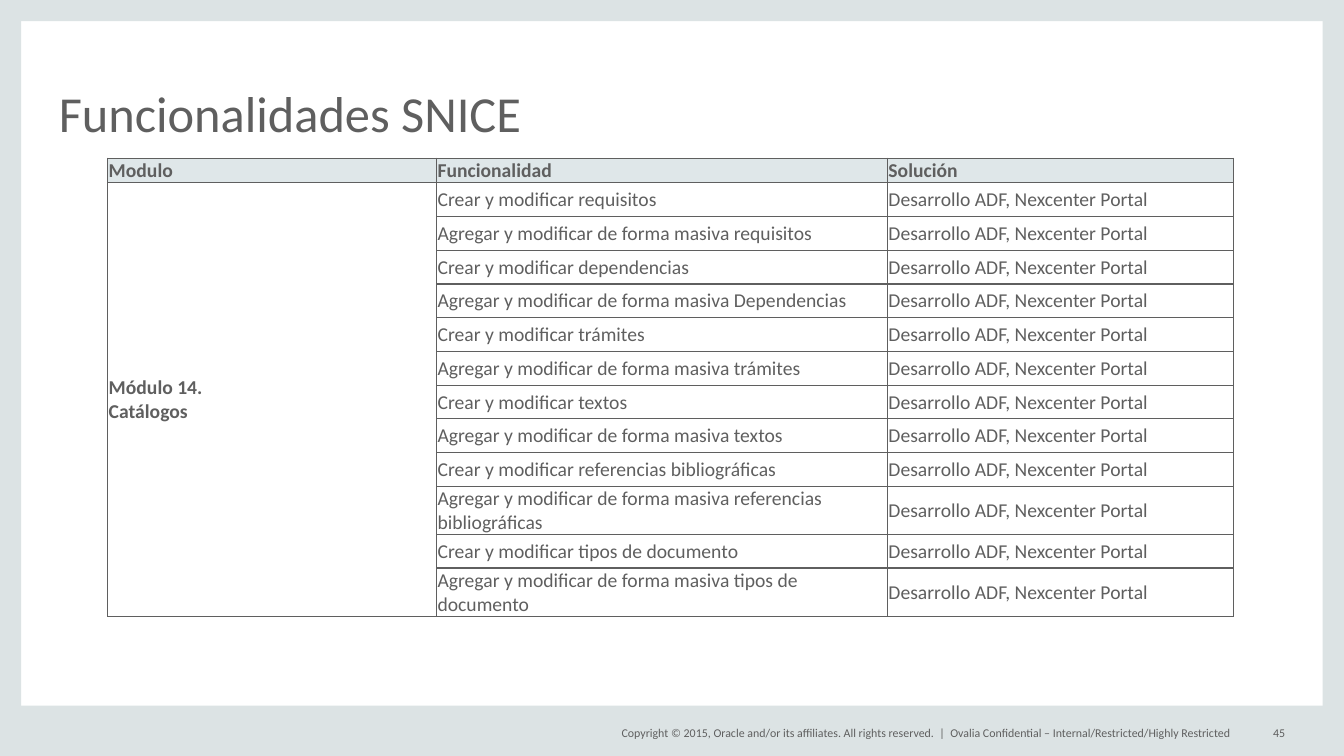
"""Build the SNICE functionality slide with its catalogue table."""
from typing import NamedTuple

from lxml import etree
from pptx import Presentation
from pptx.dml.color import RGBColor
from pptx.enum.shapes import MSO_SHAPE
from pptx.enum.text import MSO_ANCHOR, PP_ALIGN
from pptx.oxml.ns import qn
from pptx.util import Pt

RECT = MSO_SHAPE.RECTANGLE
MIDDLE, BOTTOM = MSO_ANCHOR.MIDDLE, MSO_ANCHOR.BOTTOM
LEFT, RIGHT = PP_ALIGN.LEFT, PP_ALIGN.RIGHT

GREY = RGBColor(0x5F, 0x5F, 0x5F)
FRAME = RGBColor(0xDC, 0xE3, 0xE4)
HEADER = RGBColor(0xDF, 0xE7, 0xE9)

WIDTH, HEIGHT = 960, 540
SIDE, FOOT = 15.2, 36
FOOTER_TOP, FOOTER_HEIGHT, FOOTER_SIZE = 516.2, 14.4, 8.5
TABLE_LEFT, TABLE_TOP = 77, 113
COLUMN_WIDTHS = (234.9, 322.1, 247.2)
HEADER_HEIGHT, ROW_HEIGHT = 16.6, 24.1
TABLE_SIZE = 14
BORDER = 1
CELL_FORMAT = {
    "margin_left": Pt(0.7),
    "margin_right": Pt(0.7),
    "margin_top": Pt(0.7),
    "margin_bottom": Pt(0),
    "vertical_anchor": MIDDLE,
}

HEADINGS = ("Modulo", "Funcionalidad", "Solución")
MODULE = "Módulo 14.\vCatálogos"
SOLUTION = "Desarrollo ADF, Nexcenter Portal"
SUBJECTS = (
    ("requisitos", "requisitos"),
    ("dependencias", "Dependencias"),
    ("trámites", "trámites"),
    ("textos", "textos"),
    ("referencias bibliográficas", "referencias bibliográficas"),
    ("tipos de documento", "tipos de documento"),
)


class Box(NamedTuple):
    """Position and size in points."""

    left: float
    top: float
    width: float
    height: float


class Label(NamedTuple):
    """A text box with its format."""

    text: str
    box: Box
    size: float
    align: PP_ALIGN = LEFT
    anchor: MSO_ANCHOR = MIDDLE
    wrap: bool = False
    line_spacing: float = 1


def footer(text: str, left: float, width: float, align: PP_ALIGN) -> Label:
    """Return a label on the footer line."""
    box = Box(left, FOOTER_TOP, width, FOOTER_HEIGHT)
    return Label(text, box, FOOTER_SIZE, align)


FRAME_STRIPS = (
    Box(0, 0, SIDE, HEIGHT),
    Box(WIDTH - SIDE, 0, SIDE, HEIGHT),
    Box(0, HEIGHT - FOOT, WIDTH, FOOT),
    Box(0, 0, WIDTH, SIDE),
)
LABELS = (
    footer(
        "Copyright © 2015, Oracle and/or its affiliates. All rights reserved.  |",
        423.2, 252, RIGHT,
    ),
    Label("Funcionalidades SNICE", Box(42, 31.7, 876, 69.8), 36,
          anchor=BOTTOM, wrap=True, line_spacing=0.8),
    footer("Ovalia Confidential – Internal/Restricted/Highly Restricted",
           678.8, 216, LEFT),
    footer("45", 887.8, 30.2, RIGHT),
)


def set_format(obj, values: dict) -> None:
    """Set attributes from a dict of format values."""
    for name, value in values.items():
        setattr(obj, name, value)


def style_runs(p, size: float, bold: bool = False) -> None:
    """Give every run of a paragraph the slide font."""
    for r in p.runs:
        set_format(r.font, {"name": "Calibri", "size": Pt(size), "bold": bold})
        r.font.color.rgb = GREY


def draw_strip(slide, box: Box) -> None:
    """Draw one side of the slide frame."""
    sp = slide.shapes.add_shape(RECT, *map(Pt, box))
    sp.shadow.inherit = False
    sp.fill.solid()
    sp.fill.fore_color.rgb = FRAME
    sp.line.fill.background()


def draw_label(slide, label: Label) -> None:
    """Draw a text box."""
    tf = slide.shapes.add_textbox(*map(Pt, label.box)).text_frame
    set_format(tf, {
        "margin_left": 0, "margin_right": 0, "margin_top": 0, "margin_bottom": 0,
        "word_wrap": label.wrap, "vertical_anchor": label.anchor,
    })
    p = tf.paragraphs[0]
    p.text = label.text
    set_format(p, {"alignment": label.align, "line_spacing": label.line_spacing})
    style_runs(p, label.size)


def add_borders(cell) -> None:
    """Outline a cell on all four sides."""
    props = cell._tc.get_or_add_tcPr()
    for i, side in enumerate(("a:lnL", "a:lnR", "a:lnT", "a:lnB")):
        line = etree.Element(qn(side), w=str(Pt(BORDER)))
        fill = etree.SubElement(line, qn("a:solidFill"))
        etree.SubElement(fill, qn("a:srgbClr"), val=str(GREY))
        props.insert(i, line)


def draw_table(slide) -> None:
    """Draw the table of functions and solutions."""
    functions = [
        text
        for single, bulk in SUBJECTS
        for text in (f"Crear y modificar {single}",
                     f"Agregar y modificar de forma masiva {bulk}")
    ]
    rows = [HEADINGS] + [
        ("" if i else MODULE, text, SOLUTION) for i, text in enumerate(functions)
    ]
    box = Box(TABLE_LEFT, TABLE_TOP, sum(COLUMN_WIDTHS),
              HEADER_HEIGHT + ROW_HEIGHT * len(functions))
    table = slide.shapes.add_table(len(rows), len(HEADINGS), *map(Pt, box)).table
    set_format(table, {"first_row": False, "horz_banding": False})
    for column, width in zip(table.columns, COLUMN_WIDTHS):
        column.width = Pt(width)
    for i, texts in enumerate(rows):
        table.rows[i].height = Pt(ROW_HEIGHT if i else HEADER_HEIGHT)
        for j, text in enumerate(texts):
            cell = table.cell(i, j)
            set_format(cell, CELL_FORMAT)
            if i:
                cell.fill.background()
            else:
                cell.fill.solid()
                cell.fill.fore_color.rgb = HEADER
            add_borders(cell)
            p = cell.text_frame.paragraphs[0]
            p.text = text
            style_runs(p, TABLE_SIZE, bold=i == 0 or j == 0)
    table.cell(1, 0).merge(table.cell(len(functions), 0))


def main() -> None:
    """Create and save the presentation."""
    prs = Presentation()
    set_format(prs, {"slide_width": Pt(WIDTH), "slide_height": Pt(HEIGHT)})
    slide = prs.slides.add_slide(prs.slide_layouts[6])
    for strip in FRAME_STRIPS:
        draw_strip(slide, strip)
    for label in LABELS:
        draw_label(slide, label)
    draw_table(slide)
    prs.save("out.pptx")


if __name__ == "__main__":
    main()
